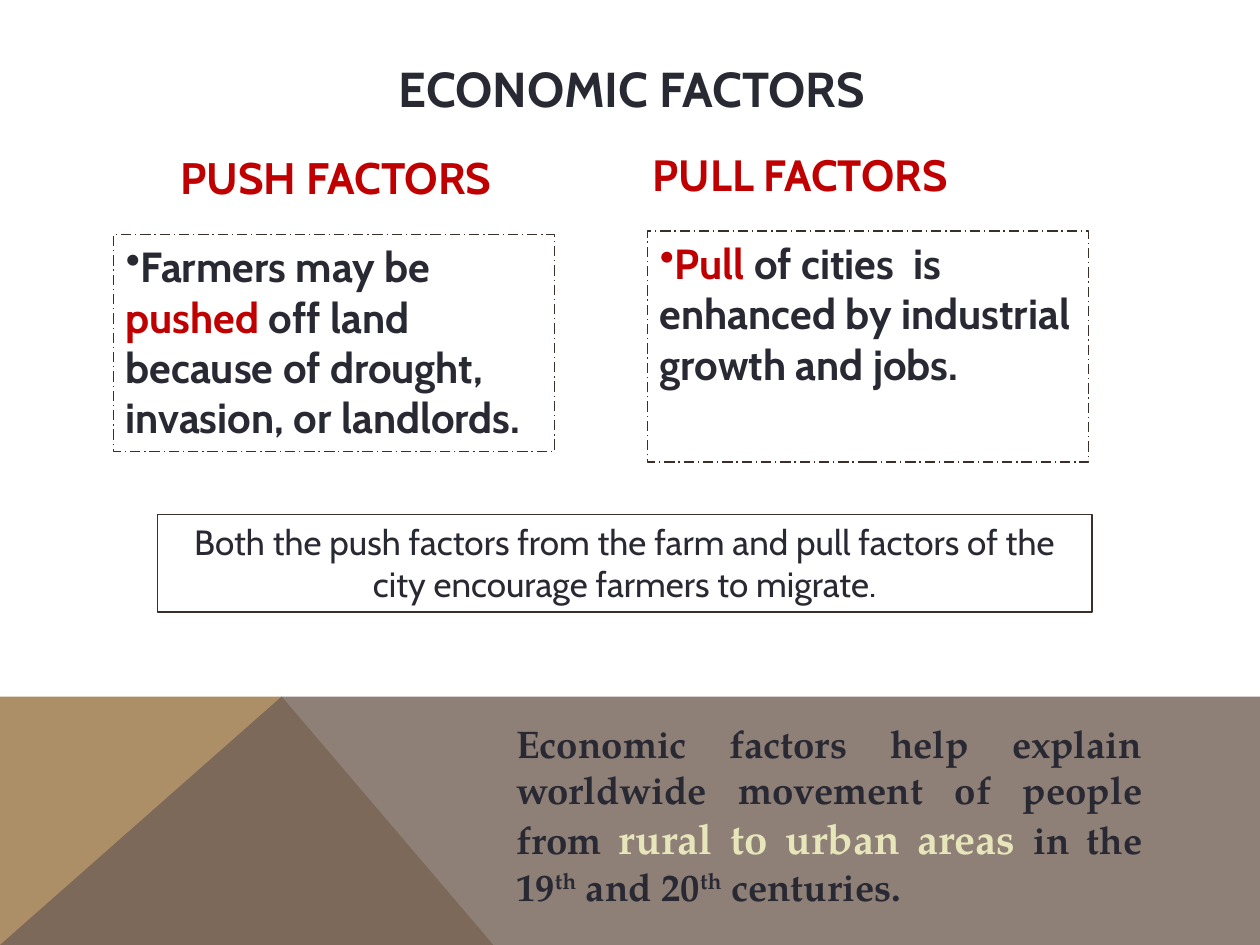
"""Build a slide on the economic push and pull factors of migration."""
from dataclasses import dataclass
from typing import Optional

from lxml import etree
from pptx import Presentation, util as u
from pptx.dml import color, fill
from pptx.enum import dml, text
from pptx.oxml import ns

INK, RED, CREAM = "292934", "C00000", "E7E5BA"
EDGE, SAND, BROWN = "39302B", "AD8F67", "726056"
SANS, SERIF = "Cabin", "TeX Gyre Pagella"
WIDE, HIGH = 720, 540
RIDGE, PEAK, FOOT = 397.5, 160.6, 281.5


@dataclass
class Phrase:
    words: str
    size: float = 24
    hue: str = INK
    bold: bool = True
    raised: bool = False


@dataclass
class Block:
    left: float
    top: float
    width: float
    height: float
    phrases: list[Phrase]
    font: str = SANS
    align: text.PP_ALIGN = text.PP_ALIGN.LEFT
    anchor: text.MSO_ANCHOR = text.MSO_ANCHOR.TOP
    framed: bool = False
    dash: Optional[dml.MSO_LINE] = None
    bullet: bool = False


@dataclass
class Facet:
    points: list[tuple[float, float]]
    hue: str
    alpha: int = 100


def paint(target: fill.FillFormat, hue: str) -> None:
    target.solid()
    target.fore_color.rgb = color.RGBColor.from_string(hue)


def draw_facet(slide, facet: Facet) -> None:
    first, *rest = facet.points
    form = slide.shapes.build_freeform(*first, scale=u.Pt(1))
    form.add_line_segments(rest, close=True)
    shape = form.convert_to_shape()
    shape.shadow.inherit = False
    shape.line.fill.background()
    paint(shape.fill, facet.hue)
    if facet.alpha < 100:
        tint = shape.element.spPr.find(".//" + ns.qn("a:srgbClr"))
        etree.SubElement(tint, ns.qn("a:alpha"), val=str(facet.alpha * 1000))


def write_phrase(line, phrase: Phrase, font: str) -> None:
    run = line.add_run()
    run.text = phrase.words
    run.font.name = font
    run.font.size = u.Pt(phrase.size)
    run.font.bold = phrase.bold
    paint(run.font.fill, phrase.hue)
    if phrase.raised:
        run._r.get_or_add_rPr().set("baseline", "30000")


def draw_block(slide, block: Block) -> None:
    place = map(u.Pt, (block.left, block.top, block.width, block.height))
    box = slide.shapes.add_textbox(*place)
    if block.framed:
        paint(box.line.fill, EDGE)
        box.line.width = u.Pt(0.75)
        if block.dash:
            box.line.dash_style = block.dash
    frame = box.text_frame
    frame.word_wrap = True
    frame.vertical_anchor = block.anchor
    line = frame.paragraphs[0]
    line.alignment = block.align
    if block.bullet:
        props = line._p.get_or_add_pPr()
        props.set("marL", "0")
        props.set("indent", "0")
        etree.SubElement(props, ns.qn("a:buChar"), char="•")
    for phrase in block.phrases:
        write_phrase(line, phrase, block.font)


def main() -> None:
    center, middle = text.PP_ALIGN.CENTER, text.MSO_ANCHOR.MIDDLE
    dash = dml.MSO_LINE.LONG_DASH_DOT
    facets = [
        Facet([(0, HIGH), (0, RIDGE), (PEAK, RIDGE), (FOOT, HIGH)], SAND),
        Facet([(0, HIGH), (PEAK, RIDGE), (WIDE, RIDGE), (WIDE, HIGH)], BROWN, 80),
    ]
    blocks = [
        Block(64.8, 29, 592.5, 43, [Phrase("ECONOMIC FACTORS", 28)],
              align=center, anchor=middle),
        Block(66, 74, 252, 54, [Phrase("PUSH FACTORS", 25.2, RED)],
              align=center, anchor=middle),
        Block(64.8, 134, 252, 124, [
            Phrase("Farmers may be "), Phrase("pushed ", hue=RED),
            Phrase("off land because of drought, invasion, or landlords."),
        ], framed=True, dash=dash, bullet=True),
        Block(366, 78, 252, 43, [Phrase("PULL FACTORS", 25, RED)], anchor=middle),
        Block(370, 132, 252, 132, [
            Phrase("Pull ", hue=RED),
            Phrase("of cities  is enhanced by industrial growth and jobs."),
        ], framed=True, dash=dash, bullet=True),
        Block(288, 408, 372, 117, [
            Phrase("Economic factors help explain worldwide movement of people from ", 22),
            Phrase("rural to urban areas ", hue=CREAM),
            Phrase("in the 19", 22), Phrase("th", 22, raised=True),
            Phrase(" and 20", 22), Phrase("th", 22, raised=True),
            Phrase(" centuries.", 22),
        ], font=SERIF, align=text.PP_ALIGN.JUSTIFY),
        Block(90, 294, 534, 55.7, [
            Phrase("Both the push factors from the farm and pull factors of the "
                   "city encourage farmers to migrate.", 20, bold=False),
        ], align=center, framed=True),
    ]
    deck = Presentation()
    deck.slide_width, deck.slide_height = u.Pt(WIDE), u.Pt(HIGH)
    slide = deck.slides.add_slide(deck.slide_layouts[6])
    paint(slide.background.fill, "FFFFFF")
    for facet in facets:
        draw_facet(slide, facet)
    for block in blocks:
        draw_block(slide, block)
    deck.save("out.pptx")


if __name__ == "__main__":
    main()
